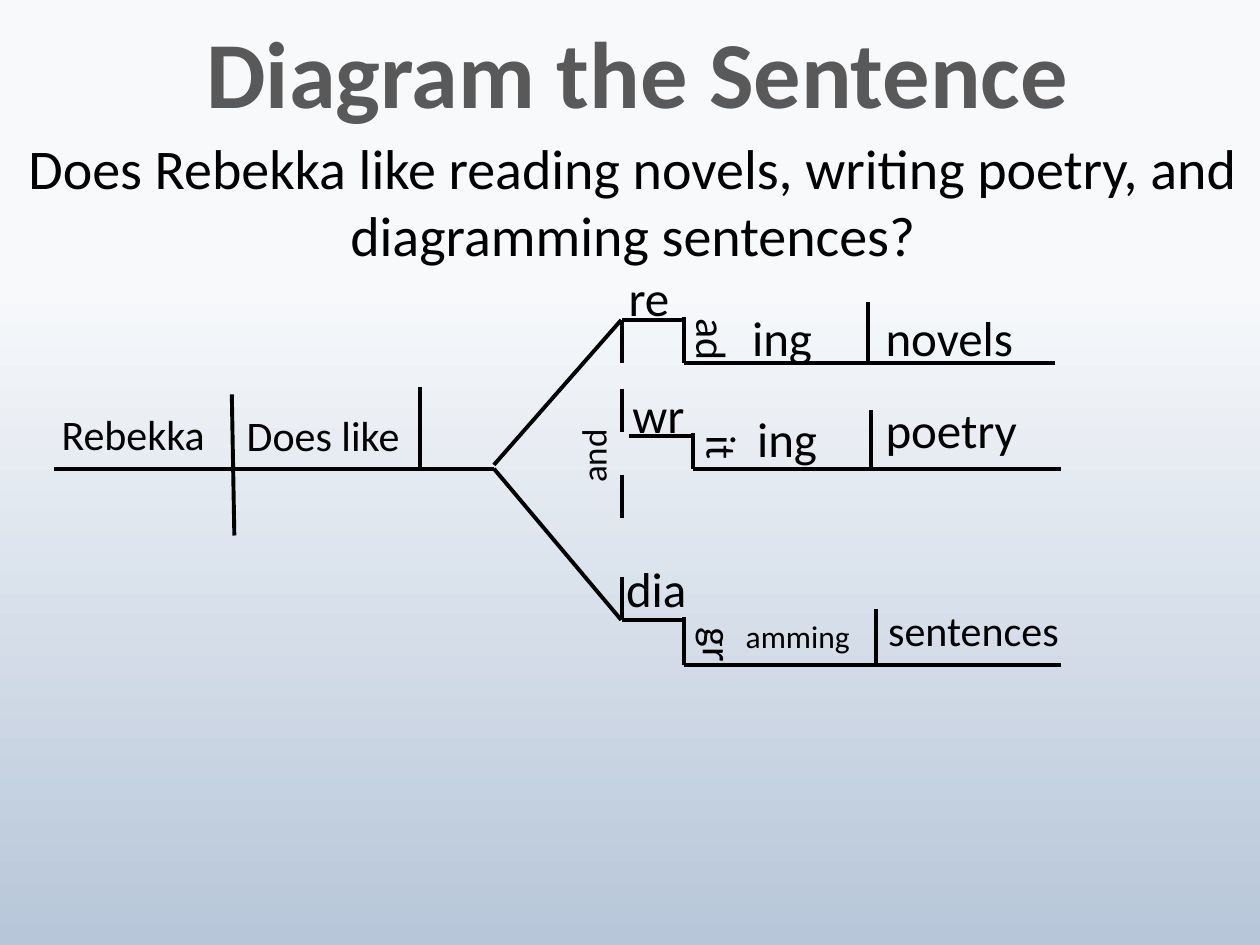
"""Build a slide that diagrams a sentence with three gerund phrases."""
from lxml.etree import SubElement
from pptx import Presentation
from pptx.dml.color import RGBColor as Rgb
from pptx.enum.shapes import MSO_CONNECTOR as Link
from pptx.enum.text import MSO_ANCHOR as Anchor, MSO_AUTO_SIZE as Fit, PP_ALIGN as Align
from pptx.oxml.ns import qn
from pptx.util import Inches, Pt

THEME = {
    "font": "Calibri",
    "ink": "000000",
    "title": ((0.5, "595959"), (1, "262626")),
    "back": ((0.3, "F7F9FB"), (1, "B7C6D9")),
    "line": 2.25,
    "head": 54,
    "body": 32,
    "big": 28,
    "mid": 24,
    "small": 20,
    "tiny": 18,
}

TITLE = "Diagram the Sentence"
PROMPT = "Does Rebekka like reading novels, writing poetry, and diagramming sentences?"

# text, left, top, width, size, turn
WORDS = [
    ("Rebekka", 0.39, 3.19, 1.47, "mid", 0),
    ("Does like", 1.86, 3.2, 1.69, "mid", 0),
    ("and", 4.21, 3.22, 0.99, "small", 270),
    ("re", 4.89, 2.07, 0.68, "big", 0),
    ("ad", 5.31, 2.53, 0.7, "mid", 90),
    ("ing", 5.87, 2.39, 0.82, "big", 0),
    ("novels", 6.93, 2.39, 1.24, "big", 0),
    ("wr", 4.92, 3, 0.82, "big", 0),
    ("it", 5.47, 3.38, 0.54, "mid", 90),
    ("ing", 5.91, 3.19, 0.82, "big", 0),
    ("poetry", 6.93, 3.12, 1.27, "big", 0),
    ("dia", 4.87, 4.38, 0.89, "big", 0),
    ("gr", 5.42, 4.92, 0.58, "mid", 90),
    ("amming", 5.82, 4.85, 1.07, "tiny", 0),
    ("sentences", 6.95, 4.75, 1.81, "mid", 0),
]

TRUNK = [
    (0.43, 3.72, 3.92, 3.72),
    (1.84, 3.13, 1.86, 4.25),
    (3.33, 3.07, 3.33, 3.72),
    (3.92, 3.69, 4.93, 2.54),
    (3.92, 3.72, 4.93, 4.92),
]

# left, top, step, base, bar, bar top, right
STEPS = [
    (4.94, 2.54, 5.43, 2.88, 6.89, 2.4, 8.37),
    (4.99, 3.46, 5.5, 3.72, 6.91, 3.25, 8.42),
    (4.94, 4.92, 5.43, 5.28, 6.95, 4.83, 8.42),
]

DASH_X, DASH_LEN = 4.94, 0.34
DASH_TOPS = [2.54, 3.09, 3.77, 4.58]


def blend(fill, stops):
    fill.gradient()
    fill.gradient_angle = 270
    for stop, (place, color) in zip(fill.gradient_stops, stops):
        stop.position = place
        stop.color.rgb = Rgb.from_string(color)


def style(frame, size):
    font = frame.paragraphs[0].runs[0].font
    font.name, font.size = THEME["font"], Pt(THEME[size])
    font.color.rgb = Rgb.from_string(THEME["ink"])
    return font


def place(shape, *box):
    shape.left, shape.top, shape.width, shape.height = map(Inches, box)


def add_text(slide, text, left, top, width, size, turn=0, lines=1):
    high = lines * THEME[size] * 1.2 / 72 + 0.1
    box = slide.shapes.add_textbox(*map(Inches, (left, top, width, high)))
    box.rotation = turn
    frame = box.text_frame
    frame.word_wrap, frame.auto_size = True, Fit.SHAPE_TO_FIT_TEXT
    frame.text = text
    style(frame, size)
    return frame


def add_line(slide, *ends):
    line = slide.shapes.add_connector(Link.STRAIGHT, *map(Inches, ends))
    line.line.width = Pt(THEME["line"])
    line.line.color.rgb = Rgb.from_string(THEME["ink"])
    SubElement(line._element.spPr, qn("a:effectLst"))


def add_step(slide, left, top, step, base, bar, peak, right):
    add_line(slide, left, top, step, top)
    add_line(slide, step, top - 0.02, step, base)
    add_line(slide, step, base, right, base)
    add_line(slide, bar, peak, bar, base)


def add_title(slide):
    title = slide.shapes.title
    place(title, 1.06, -0.07, 8, 1.38)
    frame = title.text_frame
    frame.text, frame.vertical_anchor = TITLE, Anchor.MIDDLE
    par = frame.paragraphs[0]
    par.alignment, par.line_spacing = Align.CENTER, Pt(56)
    font = style(frame, "head")
    font.bold = True
    blend(font.fill, THEME["title"])


def main():
    deck = Presentation()
    deck.slide_width, deck.slide_height = Inches(10), Inches(7.5)
    slide = deck.slides.add_slide(deck.slide_layouts[5])
    blend(slide.background.fill, THEME["back"])
    add_title(slide)
    prompt = add_text(slide, PROMPT, 0.11, 1.01, 9.83, "body", lines=2)
    prompt.paragraphs[0].alignment = Align.CENTER
    for ends in TRUNK:
        add_line(slide, *ends)
    for step in STEPS:
        add_step(slide, *step)
    for top in DASH_TOPS:
        add_line(slide, DASH_X, top, DASH_X, top + DASH_LEN)
    for word in WORDS:
        add_text(slide, *word)
    deck.save("out.pptx")


if __name__ == "__main__":
    main()
